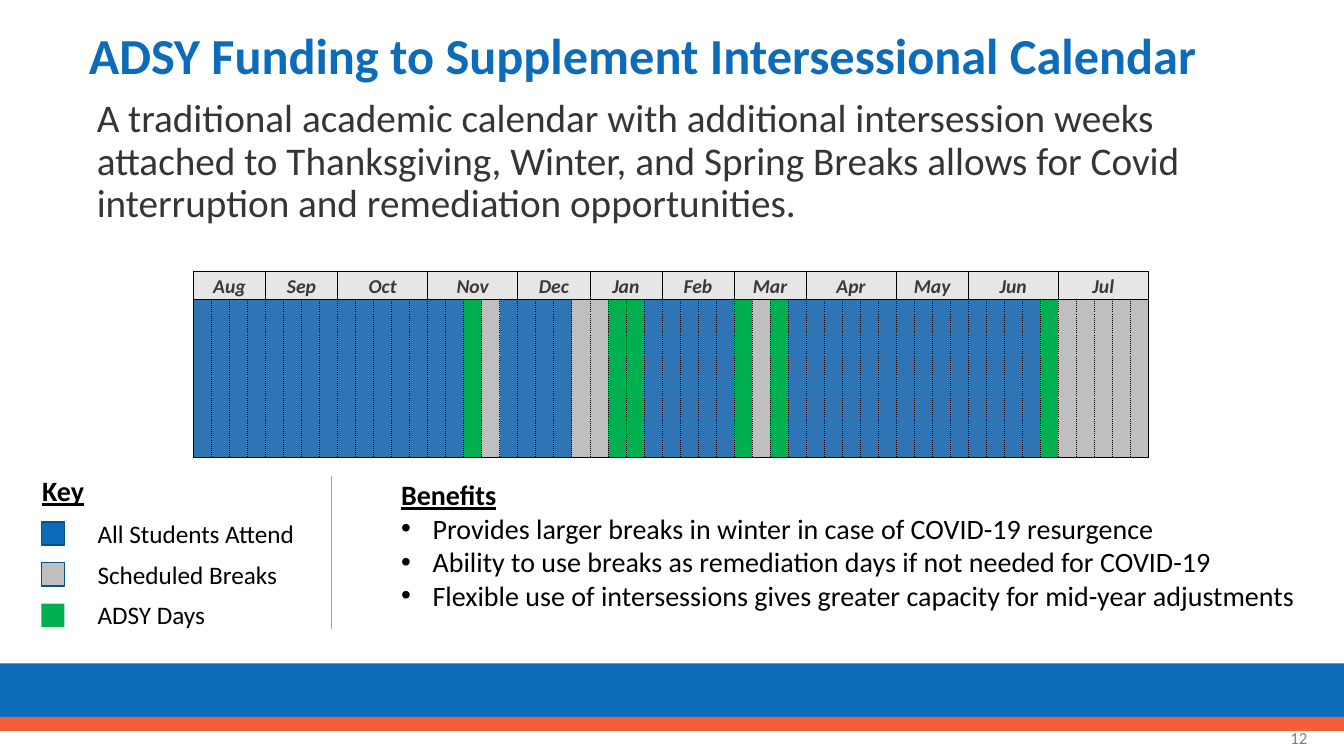
"""Build the intersessional calendar slide."""
from lxml import etree
from pptx import Presentation
from pptx.dml.color import RGBColor
from pptx.enum.shapes import MSO_CONNECTOR, MSO_SHAPE
from pptx.enum.text import MSO_ANCHOR, MSO_AUTO_SIZE, PP_ALIGN
from pptx.oxml.ns import qn
from pptx.util import Pt

RECTANGLE = MSO_SHAPE.RECTANGLE
STRAIGHT = MSO_CONNECTOR.STRAIGHT
TOP, MIDDLE, BOTTOM = MSO_ANCHOR.TOP, MSO_ANCHOR.MIDDLE, MSO_ANCHOR.BOTTOM
LEFT, CENTER, RIGHT = PP_ALIGN.LEFT, PP_ALIGN.CENTER, PP_ALIGN.RIGHT
FIXED = MSO_AUTO_SIZE.NONE

COLORS = {
    "blue": "0D6CB9", "orange": "F16038", "body": "363534", "black": "000000",
    "number": "808080", "header": "E7E6E6", "month": "3A3838",
    "attend": "2F75B5", "adsy": "00B050", "break": "BFBFBF",
    "outline": "0A5089", "divider": "A2A2A2",
}
MONTHS = [("Aug", 4), ("Sep", 4), ("Oct", 5), ("Nov", 5), ("Dec", 4), ("Jan", 4),
          ("Feb", 4), ("Mar", 4), ("Apr", 5), ("May", 4), ("Jun", 5), ("Jul", 5)]
WEEK_RUNS = [("attend", 15), ("adsy", 1), ("break", 1), ("attend", 4), ("break", 2),
             ("adsy", 2), ("attend", 5), ("adsy", 1), ("break", 1), ("adsy", 1),
             ("attend", 14), ("adsy", 1), ("break", 5)]
KEY = [("All Students Attend", "blue", "outline"),
       ("Scheduled Breaks", "break", "outline"),
       ("ADSY Days", "adsy", None)]
BENEFITS = [
    "Provides larger breaks in winter in case of COVID-19 resurgence",
    "Ability to use breaks as remediation days if not needed for COVID-19",
    "Flexible use of intersessions gives greater capacity for mid-year adjustments",
]


def rgb(name):
    """Return the named color."""
    return RGBColor.from_string(COLORS[name])


def write(para, text, size=18, color="black", bold=False, italic=False,
          underline=False, align=LEFT, spacing=1.0, bullet=None, indent=0):
    """Fill a paragraph with one formatted span."""
    properties = para._p.get_or_add_pPr()
    properties.set("marL", str(Pt(indent)))
    properties.set("indent", str(-Pt(indent)))
    if bullet:
        etree.SubElement(properties, qn("a:buFont"), typeface="Arial")
        etree.SubElement(properties, qn("a:buChar"), char=bullet)
    else:
        etree.SubElement(properties, qn("a:buNone"))
    para.alignment = align
    para.line_spacing = spacing
    para.space_before = Pt(0)
    span = para.add_run()
    span.text = text
    font = span.font
    font.name, font.size = "Calibri", Pt(size)
    font.bold, font.italic, font.underline = bold, italic, underline
    font.color.rgb = rgb(color)


class SlideBuilder:
    """Hold the style and the current slide."""

    def __init__(self, slide):
        """Keep the slide to draw on."""
        self.slide = slide

    def placeholder(self, holder, left, top, width, height, text, anchor=TOP, **style):
        """Move a template placeholder and fill it."""
        holder.left, holder.top = Pt(left), Pt(top)
        holder.width, holder.height = Pt(width), Pt(height)
        frame = holder.text_frame
        frame.auto_size = FIXED
        frame.vertical_anchor = anchor
        write(frame.paragraphs[0], text, **style)

    def text(self, left, top, width, height, text, wrap=False, anchor=TOP, **style):
        """Add a text box and return its frame."""
        box = self.slide.shapes.add_textbox(Pt(left), Pt(top), Pt(width), Pt(height))
        frame = box.text_frame
        frame.word_wrap = wrap
        frame.vertical_anchor = anchor
        write(frame.paragraphs[0], text, **style)
        return frame

    def rectangle(self, left, top, width, height, fill, line=None):
        """Add a flat rectangle."""
        box = self.slide.shapes.add_shape(
            RECTANGLE, Pt(left), Pt(top), Pt(width), Pt(height))
        box.shadow.inherit = False
        box.fill.solid()
        box.fill.fore_color.rgb = rgb(fill)
        if line:
            box.line.color.rgb = rgb(line)
            box.line.width = Pt(1)
        else:
            box.line.fill.background()

    def divider(self, left, top, bottom):
        """Add a thin vertical line."""
        line = self.slide.shapes.add_connector(
            STRAIGHT, Pt(left), Pt(top), Pt(left), Pt(bottom))
        line.line.color.rgb = rgb("divider")
        line.line.width = Pt(0.5)
        etree.SubElement(line._element.spPr, qn("a:effectLst"))

    def cell(self, cell, fill, dotted=""):
        """Fill a cell and border it, dotting the listed sides."""
        cell.margin_left = cell.margin_right = cell.margin_top = Pt(0.72)
        cell.margin_bottom = Pt(0)
        cell.vertical_anchor = BOTTOM
        properties = cell._tc.get_or_add_tcPr()
        for side in "LRTB":
            border = etree.SubElement(properties, qn(f"a:ln{side}"), w=str(Pt(0.5)))
            paint = etree.SubElement(border, qn("a:solidFill"))
            etree.SubElement(paint, qn("a:srgbClr"), val=COLORS["black"])
            dash = "sysDot" if side in dotted else "solid"
            etree.SubElement(border, qn("a:prstDash"), val=dash)
        cell.fill.solid()
        cell.fill.fore_color.rgb = rgb(fill)

    def calendar(self, left, top, week_width, heights):
        """Add the table of weeks under merged month headings."""
        weeks = [kind for kind, count in WEEK_RUNS for _ in range(count)]
        last = len(weeks) - 1
        table = self.slide.shapes.add_table(
            2, len(weeks), Pt(left), Pt(top),
            Pt(week_width * len(weeks)), Pt(sum(heights))).table
        table.first_row = table.horz_banding = False
        for row, height in zip(table.rows, heights):
            row.height = Pt(height)
        for index, kind in enumerate(weeks):
            table.columns[index].width = Pt(week_width)
            self.cell(table.cell(0, index), "header")
            dotted = ("L" if index else "") + ("R" if index < last else "")
            self.cell(table.cell(1, index), kind, dotted)
        start = 0
        for month, count in MONTHS:
            heading = table.cell(0, start)
            heading.merge(table.cell(0, start + count - 1))
            write(heading.text_frame.paragraphs[0], month, size=14, color="month",
                  bold=True, italic=True, align=CENTER)
            start += count


def main():
    """Compose and save the slide."""
    deck = Presentation()
    deck.slide_width, deck.slide_height = Pt(960), Pt(540)
    page = deck.slides.add_slide(deck.slide_layouts[1])
    builder = SlideBuilder(page)

    builder.rectangle(0, 473.8, 960, 41.8, "blue")
    builder.rectangle(0, 512, 960, 10, "orange")
    builder.placeholder(
        page.shapes.title, 56.2, 12.2, 875.5, 59,
        "ADSY Funding to Supplement Intersessional Calendar",
        anchor=MIDDLE, size=36, color="blue", bold=True, spacing=0.9)
    builder.placeholder(
        page.placeholders[1], 61.9, 67, 836.6, 342.7,
        "A traditional academic calendar with additional intersession weeks "
        "attached to Thanksgiving, Winter, and Spring Breaks allows for Covid "
        "interruption and remediation opportunities.",
        size=28, color="body", spacing=0.9)
    builder.text(725, 512.6, 216, 28.8, "12", wrap=True, anchor=MIDDLE,
                 size=12, color="number", align=RIGHT)

    builder.calendar(138.2, 193.7, 12.88, (20, 113))

    builder.text(23, 334.8, 44.6, 31.7, "Key", size=20, bold=True, underline=True)
    for index, (label, fill, line) in enumerate(KEY):
        top = 372.8 + 29.2 * index
        builder.rectangle(29.5, top, 16.6, 16.6, fill, line)
        builder.text(62.6, top - 6.3, 162, 28.8, label)
    builder.divider(236.4, 340, 449.3)

    benefits = builder.text(279.4, 337.7, 668.9, 104.4, "Benefits", wrap=True,
                            size=20, bold=True, underline=True)
    for benefit in BENEFITS:
        write(benefits.add_paragraph(), benefit, size=20, bullet="•", indent=22.5)

    deck.save("out.pptx")


if __name__ == "__main__":
    main()
